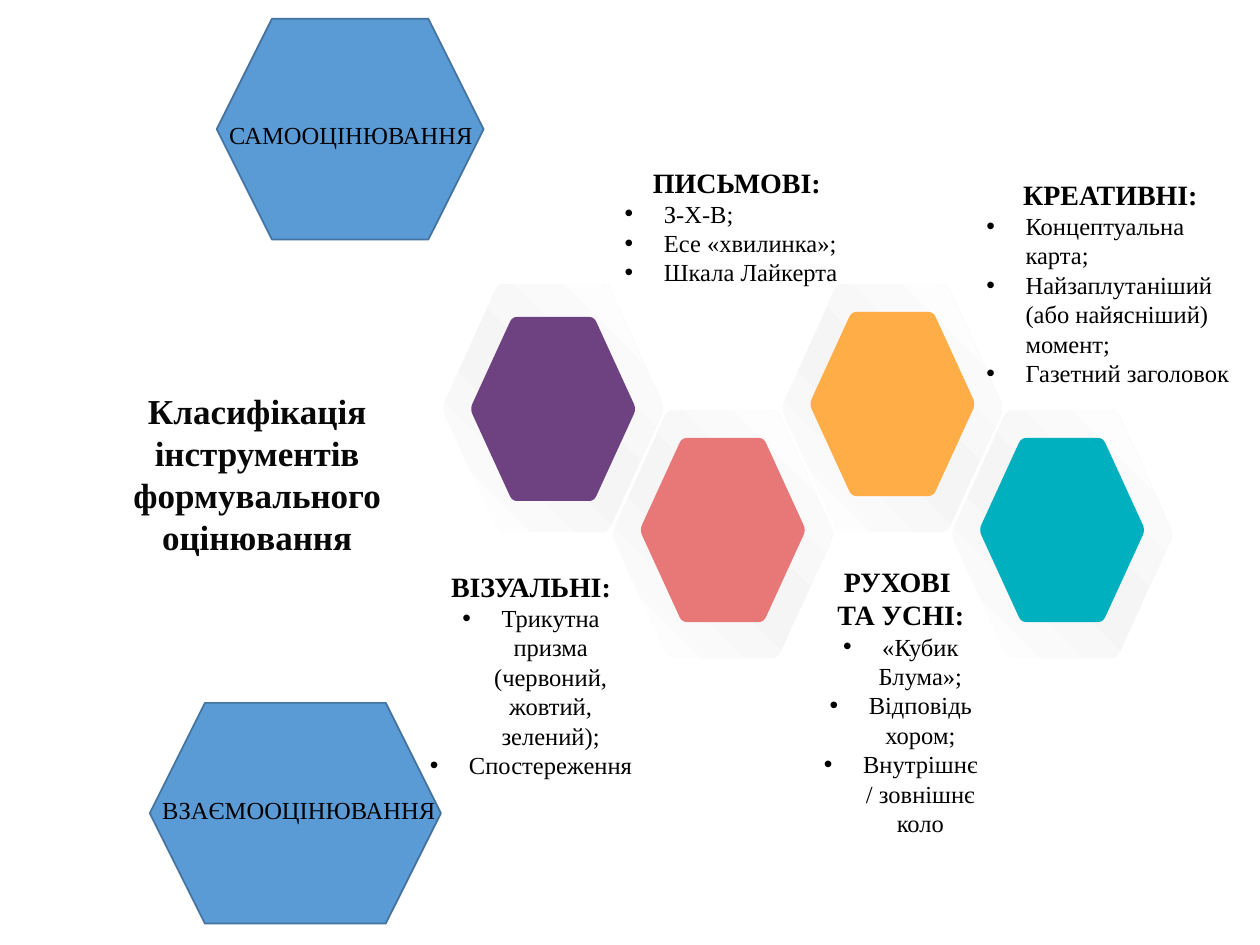
from copy import deepcopy
from dataclasses import dataclass

from lxml import etree
from pptx import Presentation
from pptx import util as u
from pptx.dml.color import RGBColor
from pptx.enum import shapes, text
from pptx.oxml.ns import qn


@dataclass(frozen=True)
class Theme:
    face: str = "Times New Roman"
    ink: str = "000000"
    title: str = "080808"
    white: str = "FFFFFF"
    grey: str = "F5F5F5"
    blue: str = "5B9BD5"
    edge: str = "43739E"
    plum: str = "6E4180"
    rose: str = "E87878"
    gold: str = "FFAE47"
    teal: str = "00B0BE"
    big: int = 20
    head: int = 16
    body: int = 14


T = Theme()
MID, LEFT = text.PP_ALIGN.CENTER, text.PP_ALIGN.LEFT
INDENT = 0.79
HALO, CORE = (4.42, 5.0), (3.3, 3.71)
RIM = 0.02  # white rim around a halo

# Box, alignment of items, heading lines, items
LISTS = [
    ((8.33, 11.35, 4.75, 5.13), MID, ["ВІЗУАЛЬНІ:"],
     ["Трикутна призма (червоний, жовтий, зелений);", "Спостереження"]),
    ((16.33, 11.25, 3.66, 5.82), MID, ["РУХОВІ ", "ТА УСНІ:"],
     ["«Кубик Блума»;", "Відповідь хором;", "Внутрішнє / зовнішнє коло"]),
    ((12.34, 3.2, 5.03, 2.74), LEFT, ["ПИСЬМОВІ:"],
     ["З-Х-В;", "Есе «хвилинка»;", "Шкала Лайкерта"]),
    ((19.63, 3.45, 5.51, 5.89), LEFT, ["КРЕАТИВНІ:"],
     ["Концептуальна карта;", "Найзаплутаніший (або найясніший) момент;",
      "Газетний заголовок"]),
]
# Column, colour, drop of the core, white rim; from back to front
CELLS = [(2, T.gold, 0.56, False), (0, T.plum, 0.66, True),
         (1, T.rose, 0.56, True), (3, T.teal, 0.56, True)]
PEERS = [((3.02, 14.17, 5.87, 4.45), "ВЗАЄМООЦІНЮВАННЯ", 1.73),
         ((4.37, 0.38, 5.38, 4.45), "САМООЦІНЮВАННЯ", 1.91)]


def apply(obj, **vals):
    for name, val in vals.items():
        setattr(obj, name, val)


def place(shape, box):
    names = ("left", "top", "width", "height")
    apply(shape, **{n: u.Cm(v) for n, v in zip(names, box)})


def frame(shape, anchor=text.MSO_ANCHOR.TOP):
    tf = shape.text_frame
    apply(tf, word_wrap=True, auto_size=text.MSO_AUTO_SIZE.NONE,
          vertical_anchor=anchor)
    return tf


def write(par, words, size, align=LEFT, bold=False, ink=T.ink, bullet=False):
    """Fill one paragraph, with or without a hanging bullet."""
    prop = par._p.get_or_add_pPr()
    hang = int(u.Cm(INDENT)) if bullet else 0
    prop.set("marL", str(hang))
    prop.set("indent", str(-hang))
    if bullet:
        etree.SubElement(prop, qn("a:buFont")).set("typeface", "Arial")
        etree.SubElement(prop, qn("a:buChar")).set("char", "•")
    else:
        etree.SubElement(prop, qn("a:buNone"))
    apply(par, alignment=align, space_before=u.Pt(0), space_after=u.Pt(0),
          line_spacing=1.0)
    run = par.add_run()
    run.text = words
    apply(run.font, name=T.face, size=u.Pt(size), bold=bold)
    run.font.color.rgb = RGBColor.from_string(ink)


def add_title(shape, box):
    place(shape, box)
    write(frame(shape).paragraphs[0],
          "Класифікація інструментів формувального оцінювання",
          T.big, MID, True, T.title)


def add_list(shape, box, align, heads, items):
    place(shape, box)
    tf = frame(shape)
    rows = [(h, T.head, MID, True) for h in heads]
    rows += [(i, T.body, align, False) for i in items]
    for n, (words, size, side, bold) in enumerate(rows):
        par = tf.add_paragraph() if n else tf.paragraphs[0]
        write(par, words, size, side, bold, bullet=not bold)


def add_hex(parent, box, cut=0.06, steps=6):
    """Draw a hexagon whose corners are rounded by quadratic curves."""
    x, y, w, h = box
    out = cut / 8  # rounding pulls the side corners in by this much
    ends = [(-out, 0.5), (0.25, 0), (0.75, 0),
            (1 + out, 0.5), (0.75, 1), (0.25, 1)]
    dots = []
    for i, (px, py) in enumerate(ends):
        (ax, ay), (bx, by) = ends[i - 1], ends[(i + 1) % 6]
        for k in range(steps + 1):
            t = k / steps
            a, b = cut * (1 - t) ** 2, cut * t ** 2
            fx = px + a * (ax - px) + b * (bx - px)
            fy = py + a * (ay - py) + b * (by - py)
            dots.append((u.Cm(x + w * fx), u.Cm(y + h * fy)))
    pen = parent.shapes.build_freeform(*dots[0])
    pen.add_line_segments(dots[1:], close=True)
    shape = pen.convert_to_shape()
    shape.shadow.inherit = False
    shape.line.fill.background()
    return shape


def paint(shape, color):
    shape.fill.solid()
    shape.fill.fore_color.rgb = RGBColor.from_string(color)


def shade(shape):
    """Give a white, grey, white gradient on the diagonal."""
    shape.fill.gradient()
    shape.fill.gradient_angle = 45
    first = shape.fill._fill._gradFill.gsLst[0]
    first.addnext(deepcopy(first))
    stops = [(0, T.white), (0.47, T.grey), (1, T.white)]
    for stop, (pos, color) in zip(shape.fill.gradient_stops, stops):
        stop.position = pos
        stop.color.rgb = RGBColor.from_string(color)


def add_cell(slide, box, color, drop, rim):
    x, y, w, h = box
    group = slide.shapes.add_group_shape()
    if rim:
        paint(add_hex(group, (x - RIM, y - RIM, w + 2 * RIM, h + 2 * RIM)),
              T.white)
    shade(add_hex(group, box))
    paint(add_hex(group, (x + (w - CORE[0]) / 2, y + drop, *CORE)), color)


def add_peer(slide, box, words, drop):
    x, y, w, h = box
    shape = slide.shapes.add_shape(shapes.MSO_SHAPE.HEXAGON,
                                   *(u.Cm(v) for v in box))
    shape.shadow.inherit = False
    paint(shape, T.blue)
    shape.line.color.rgb = RGBColor.from_string(T.edge)
    shape.line.width = u.Pt(1)
    label = slide.shapes.add_textbox(
        *(u.Cm(v) for v in (x, y + drop, w + 0.35, 0.86)))
    write(frame(label).paragraphs[0], words, T.body)


def main():
    deck = Presentation()
    apply(deck, slide_width=u.Cm(25.4), slide_height=u.Cm(19.05))
    slide = deck.slides.add_slide(deck.slide_layouts[4])

    # Title on the left
    add_title(slide.shapes.title, (2.39, 7.72, 5.59, 3.68))

    # Chain of cells, alternately high and low
    for col, color, drop, rim in CELLS:
        box = (8.94 + 3.42 * col, 5.73 + 2.54 * (col % 2), *HALO)
        add_cell(slide, box, color, drop, rim)

    # Lists, brought in front of the cells
    for num, spec_row in enumerate(LISTS, 1):
        shape = slide.placeholders[num]
        add_list(shape, *spec_row)
        slide.shapes._spTree.append(shape._element)

    # Blue hexagons for self and peer assessment
    for row in PEERS:
        add_peer(slide, *row)

    deck.save("out.pptx")


if __name__ == "__main__":
    main()
